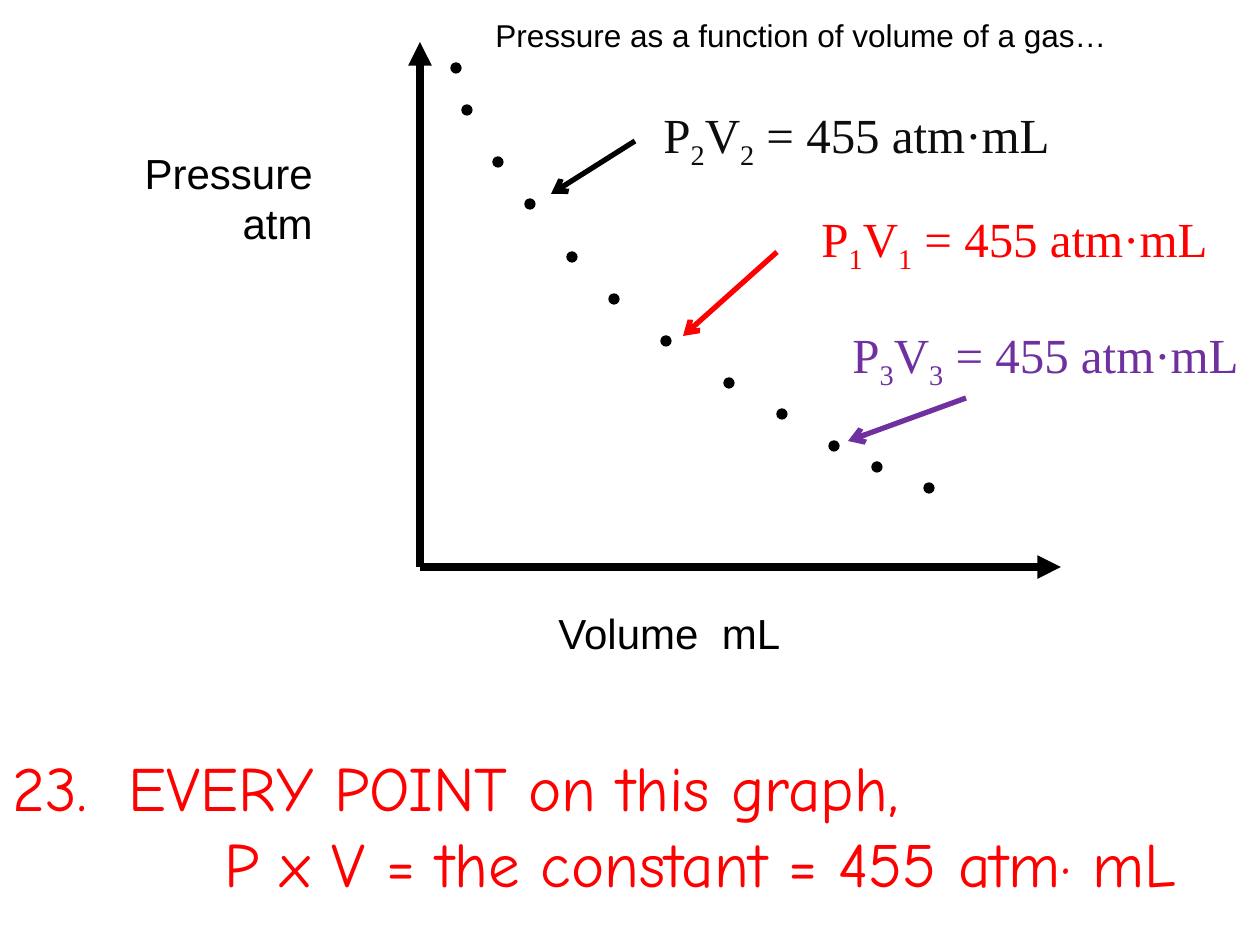
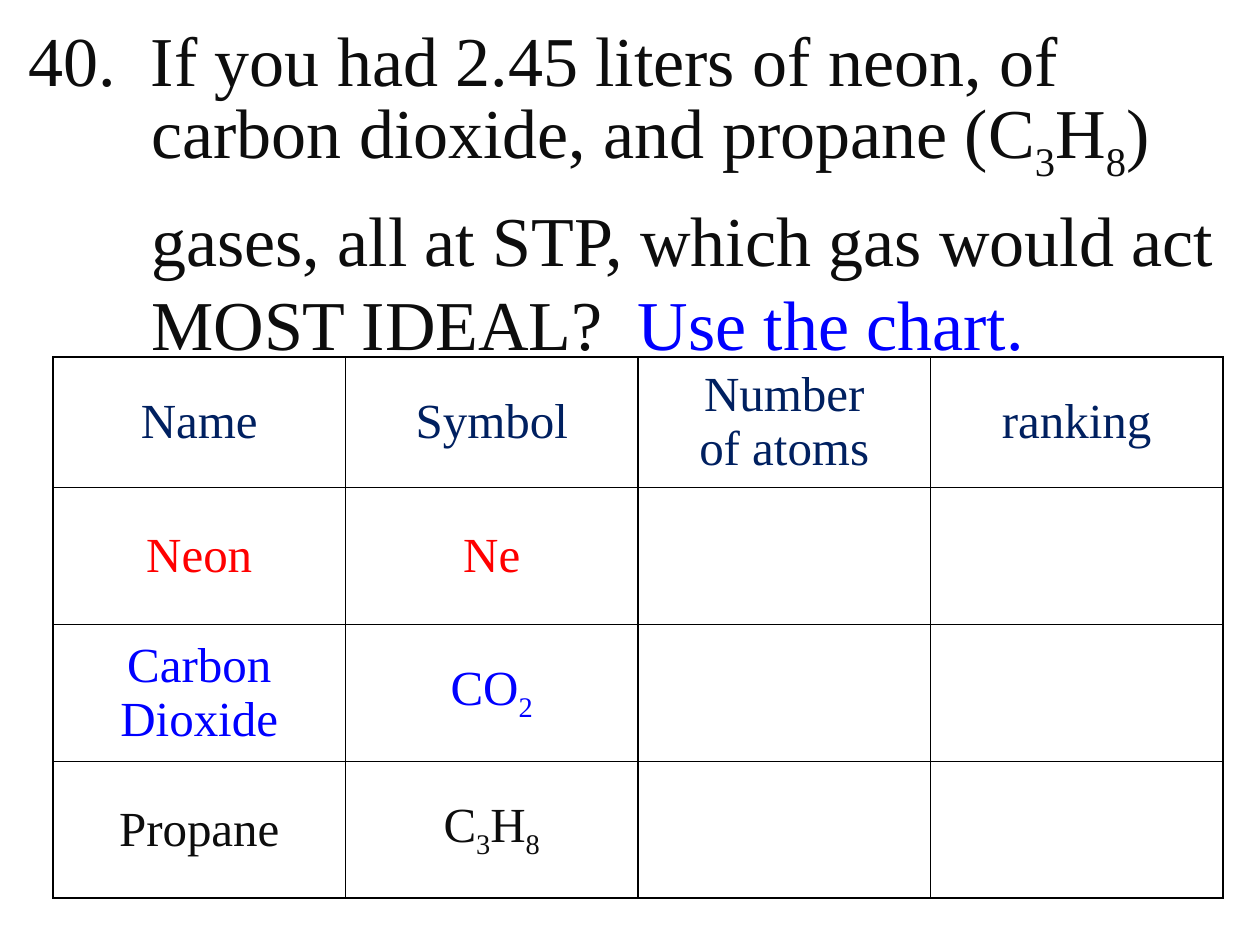
import pptx
import pptx.dml.color
import pptx.enum.shapes
import pptx.enum.text
import pptx.oxml.ns
import pptx.util
from lxml import etree

BLACK, INK, WHITE = "000000", "0D0D0D", "FFFFFF"
RED, BLUE, NAVY, PURPLE = "FF0000", "0000FF", "002060", "7030A0"
SANS, SERIF, HAND = "Arial", "Times New Roman", "Comic Neue"
ALIGN = pptx.enum.text.PP_ALIGN
ANCHOR = pptx.enum.text.MSO_ANCHOR


def px(count):
    return pptx.util.Emu(round(count * 914400 / 126))


def colour(code):
    return pptx.dml.color.RGBColor.from_string(code)


def add_xml(parent, tag, **attributes):
    return etree.SubElement(parent, pptx.oxml.ns.qn(tag), attributes)


class Deck:
    def __init__(self):
        self.deck = pptx.Presentation()
        self.deck.slide_width, self.deck.slide_height = px(1260), px(945)
        self.page = None

    def new_page(self):
        self.page = self.deck.slides.add_slide(self.deck.slide_layouts[6])
        fill = self.page.background.fill
        fill.solid()
        fill.fore_color.rgb = colour(WHITE)

    def spans(self, para, text, size, font, code):
        for index, part in enumerate(text.split("_")):
            pieces = [part] if index == 0 else [part[:1], part[1:]]
            for place, piece in enumerate(pieces):
                if not piece:
                    continue
                span = para.add_run()
                span.text = piece
                span.font.size = pptx.util.Pt(size)
                span.font.name = font
                span.font.color.rgb = colour(code)
                if index > 0 and place == 0:
                    span.font._element.set("baseline", "-25000")

    def lines(self, frame, lines, size, font, code, align=ALIGN.LEFT):
        for index, line in enumerate(lines):
            para = frame.add_paragraph() if index else frame.paragraphs[0]
            para.alignment = align
            self.spans(para, line, size, font, code)
        return frame.paragraphs

    def text(self, at, lines, size, font, code, align=ALIGN.LEFT, anchor=ANCHOR.TOP):
        box = self.page.shapes.add_textbox(*map(px, at))
        frame = box.text_frame
        frame.word_wrap = True
        frame.vertical_anchor = anchor
        paras = self.lines(frame, lines, size, font, code, align)
        for para in paras:
            para.line_spacing = pptx.util.Pt(1.2 * size)
        return paras

    def indent(self, para, left, first=0):
        properties = para._p.get_or_add_pPr()
        properties.set("marL", str(px(left)))
        properties.set("indent", str(px(first)))

    def arrow(self, start, end, code, width, head):
        line = self.page.shapes.add_connector(
            pptx.enum.shapes.MSO_CONNECTOR.STRAIGHT, *map(px, start + end))
        line.line.color.rgb = colour(code)
        line.line.width = pptx.util.Pt(width)
        add_xml(line.line._get_or_add_ln(), "a:tailEnd", type=head)
        add_xml(line._element.spPr, "a:effectLst")

    def dot(self, left, top, size=10):
        dot = self.page.shapes.add_shape(
            pptx.enum.shapes.MSO_SHAPE.OVAL, *map(px, (left, top, size, size)))
        dot.shadow.inherit = False
        dot.fill.solid()
        dot.fill.fore_color.rgb = colour(BLACK)
        dot.line.color.rgb = colour(BLACK)
        dot.line.width = pptx.util.Pt(0.75)

    def cell(self, cell, lines, size, font, code):
        properties = cell._tc.get_or_add_tcPr()
        for side in ("a:lnL", "a:lnR", "a:lnT", "a:lnB"):
            border = add_xml(properties, side, w=str(pptx.util.Pt(1)))
            add_xml(add_xml(border, "a:solidFill"), "a:srgbClr", val=BLACK)
        cell.fill.solid()
        cell.fill.fore_color.rgb = colour(WHITE)
        cell.vertical_anchor = ANCHOR.MIDDLE
        self.lines(cell.text_frame, lines, size, font, code, ALIGN.CENTER)

    def table(self, at, heights, rows, size, font):
        grid = self.page.shapes.add_table(
            len(rows), len(rows[0][1]), *map(px, at)).table
        for index, (code, row) in enumerate(rows):
            grid.rows[index].height = px(heights[index])
            for column, lines in enumerate(row):
                self.cell(grid.cell(index, column), lines, size, font, code)


def pressure_page(deck):
    deck.new_page()
    deck.text((483, 10, 714, 50), ["Pressure as a function of volume of a gas…"],
              18, SANS, BLACK)
    deck.text((95, 141, 230, 115), ["Pressure", "atm"], 24, SANS, BLACK, ALIGN.RIGHT)
    deck.text((546, 601, 420, 63), ["Volume  mL"], 24, SANS, BLACK)

    origin = (420, 567)
    for end in ((420, 42), (1061, 567)):
        deck.arrow(origin, end, BLACK, 4.5, "triangle")

    gas_points = [(451, 63), (462, 105), (493, 157), (525, 199), (567, 252), (609, 294),
                  (661, 336), (724, 378), (777, 409), (829, 441), (872, 462), (924, 483)]
    for point in gas_points:
        deck.dot(*point)

    constants = [
        (1, RED, (809, 210, 451, 72), (777, 252), (683, 336)),
        (2, INK, (651, 106, 451, 72), (635, 141), (551, 194)),
        (3, PURPLE, (840, 326, 420, 72), (966, 398), (848, 441)),
    ]
    for number, code, at, start, end in constants:
        deck.text(at, [f"P_{number}V_{number} = 455 atm·mL"], 28, SERIF, code)
        deck.arrow(start, end, BLACK if code == INK else code, 3, "arrow")

    answer = deck.text((0, 664, 1260, 242),
                       ["23.  EVERY POINT on this graph,",
                        "P x V = the constant = 455 atm· mL"],
                       36, HAND, RED, anchor=ANCHOR.BOTTOM)
    deck.indent(answer[1], 212)


def ideal_gas_page(deck):
    deck.new_page()
    question = deck.text((16, 10, 1244, 496),
                         ["40.  If you had 2.45 liters of neon, of",
                          "carbon dioxide, and propane (C_3H_8)",
                          "gases, all at STP, which gas would act",
                          "MOST IDEAL?  "],
                         40, SERIF, INK)
    for para in question[1:]:
        deck.indent(para, 123)
    question[2].space_before = pptx.util.Pt(7)
    deck.spans(question[3], "Use the chart.", 40, SERIF, BLUE)

    rows = [
        (NAVY, [["Name"], ["Symbol"], ["Number", "of atoms"], ["ranking"]]),
        (RED, [["Neon"], ["Ne"], [], []]),
        (BLUE, [["Carbon Dioxide"], ["CO_2"], [], []]),
        (INK, [["Propane"], ["C_3H_8"], [], []]),
    ]
    deck.table((53, 357, 1170, 541), [130] + [137] * 3, rows, 28, SERIF)


def main():
    deck = Deck()
    pressure_page(deck)
    ideal_gas_page(deck)
    deck.deck.save("out.pptx")


if __name__ == "__main__":
    main()
